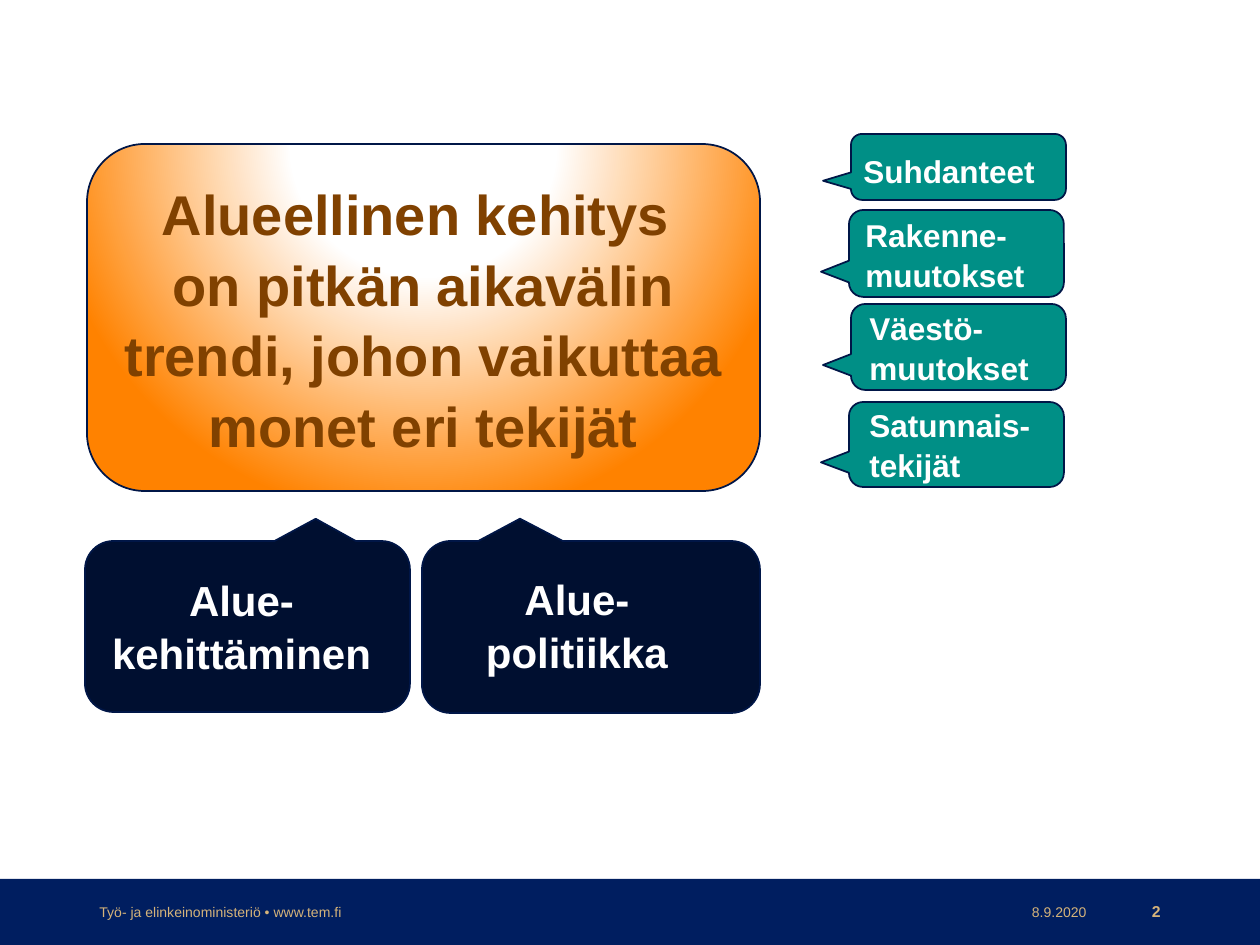
from lxml import etree
from pptx import Presentation
from pptx import util as u
from pptx.dml.color import RGBColor
from pptx.enum import shapes, text
from pptx.oxml.ns import qn

SCALE = 914400 // 126
FONT = "Arial"
NAVY, OUTLINE, TEAL = "000F30", "001647", "008F86"
WHITE, ORANGE, BROWN, GOLD, BAND = "FFFFFF", "FF8200", "804100", "D5B37A", "001E60"
LEFT, CENTER, RIGHT = text.PP_ALIGN.LEFT, text.PP_ALIGN.CENTER, text.PP_ALIGN.RIGHT
TOP, MIDDLE = text.MSO_ANCHOR.TOP, text.MSO_ANCHOR.MIDDLE


def px(*values):
    return [u.Emu(value * SCALE) for value in values]


def color(value):
    return RGBColor.from_string(value)


def write(shape, words, size, ink, align=LEFT, anchor=TOP, bold=True, spacing=1.05):
    frame = shape.text_frame
    frame.word_wrap = True
    frame.vertical_anchor = anchor
    frame.text = words
    for para in frame.paragraphs:
        para.alignment = align
        para.line_spacing = spacing
        for span in para.runs:
            span.font.name = FONT
            span.font.size = u.Pt(size)
            span.font.bold = bold
            span.font.color.rgb = color(ink)


def add_label(page, place, words, size, ink, **style):
    box = page.shapes.add_textbox(*px(*place))
    write(box, words, size, ink, **style)


def add_box(page, kind, place, fill, line=OUTLINE):
    box = page.shapes.add_shape(kind, *px(*place))
    box.shadow.inherit = False
    box.fill.solid()
    box.fill.fore_color.rgb = color(fill)
    if line:
        box.line.color.rgb = color(line)
        box.line.width = u.Pt(1)
    else:
        box.line.fill.background()
    return box


def add_callout(page, place, fill, tip):
    kind = shapes.MSO_SHAPE.ROUNDED_RECTANGULAR_CALLOUT
    box = add_box(page, kind, place, fill)
    box.adjustments[0], box.adjustments[1] = tip


def set_glow(shape, stops):
    gradient = etree.Element(qn("a:gradFill"), rotWithShape="1")
    stop_list = etree.SubElement(gradient, qn("a:gsLst"))
    for percent, value in stops:
        stop = etree.SubElement(stop_list, qn("a:gs"), pos=str(percent * 1000))
        etree.SubElement(stop, qn("a:srgbClr"), val=value)
    path = etree.SubElement(gradient, qn("a:path"))
    path.set("path", "circle")
    etree.SubElement(path, qn("a:fillToRect"), l="50000", t="-80000", r="50000", b="180000")
    solid = shape.element.spPr.find(qn("a:solidFill"))
    solid.getparent().replace(solid, gradient)


def add_message(page):
    box = add_box(page, shapes.MSO_SHAPE.ROUNDED_RECTANGLE, (87, 144, 673, 347), ORANGE)
    set_glow(box, [(0, WHITE), (35, WHITE), (100, ORANGE)])
    words = "Alueellinen kehitys \non pitkän aikavälin trendi, johon vaikuttaa monet eri tekijät"
    write(box, words, 32, BROWN, align=CENTER, anchor=MIDDLE)


def add_factors(page):
    factors = [
        ("Suhdanteet", (851, 134, 215, 66), (851, 144, 202, 50)),
        ("Rakenne-\nmuutokset", (849, 210, 215, 87), (853, 208, 202, 89)),
        ("Väestö-muutokset", (851, 304, 215, 86), (857, 301, 198, 89)),
        ("Satunnais-\ntekijät", (849, 402, 215, 85), (857, 398, 199, 89)),
    ]
    for words, place, label_place in factors:
        add_callout(page, place, TEAL, (-0.63, 0.21))
        add_label(page, label_place, words, 18, WHITE)


def add_policies(page):
    policies = [
        ("Alue-\nkehittäminen", (85, 541, 325, 171), 0.21, (87, 566, 309, 115)),
        ("Alue-\npolitiikka", (422, 541, 338, 172), -0.21, (457, 565, 240, 115)),
    ]
    for words, place, tip, label_place in policies:
        add_callout(page, place, NAVY, (tip, -0.63))
        add_label(page, label_place, words, 24, WHITE, align=CENTER)


def add_footer(page):
    add_box(page, shapes.MSO_SHAPE.RECTANGLE, (0, 879, 1260, 66), BAND, line=None)
    items = [
        ("Työ- ja elinkeinoministeriö • www.tem.fi", 87, 425, 8, LEFT, False),
        ("8.9.2020", 1002, 97, 8, RIGHT, False),
        ("2", 1099, 74, 9, RIGHT, True),
    ]
    for words, left, width, size, align, bold in items:
        add_label(page, (left, 897, width, 29), words, size, GOLD,
                  align=align, anchor=MIDDLE, bold=bold, spacing=1.0)


def main():
    deck = Presentation()
    deck.slide_width, deck.slide_height = px(1260, 945)
    page = deck.slides.add_slide(deck.slide_layouts[6])
    add_footer(page)
    add_message(page)
    add_policies(page)
    add_factors(page)
    deck.save("out.pptx")


if __name__ == "__main__":
    main()
